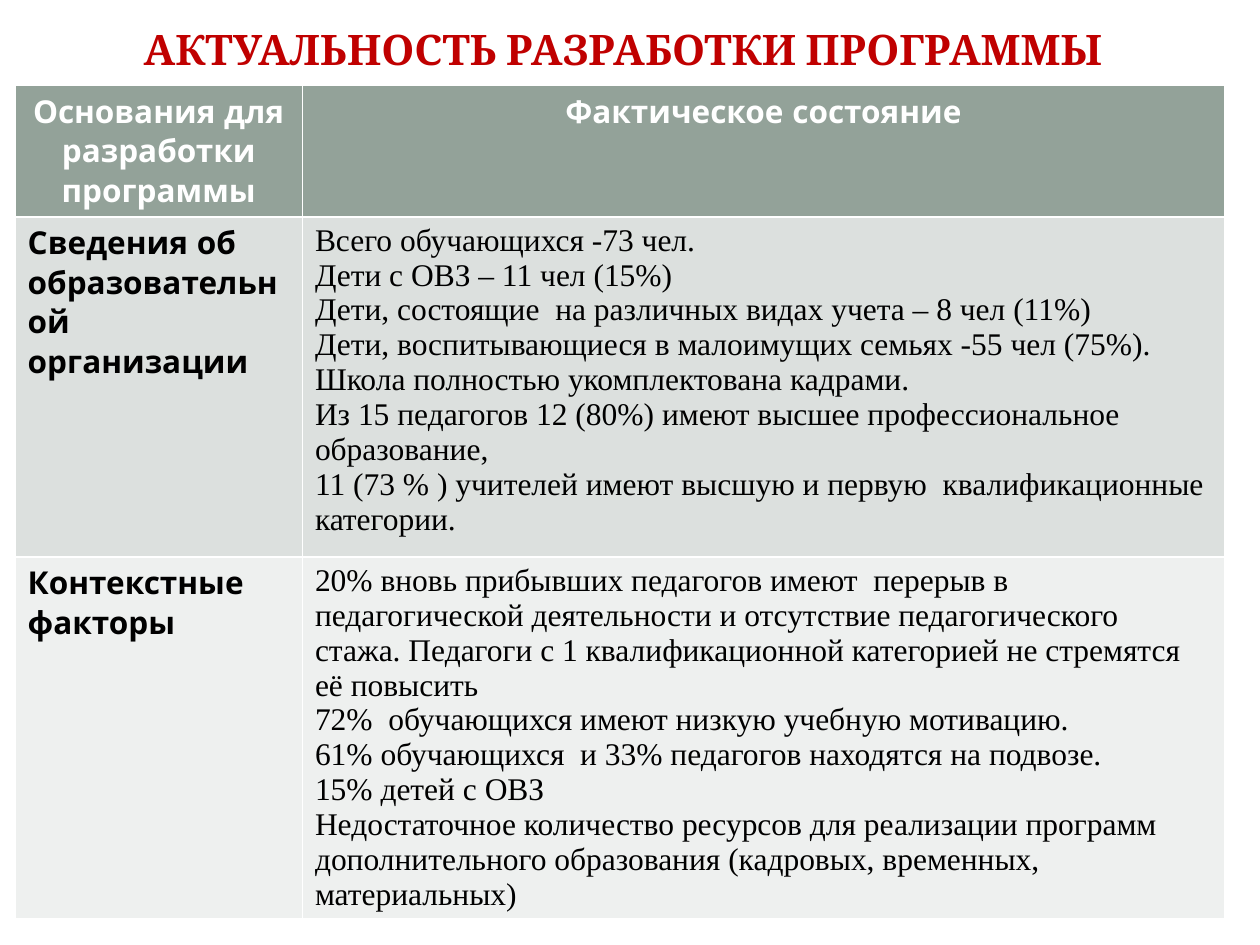
from dataclasses import dataclass

from pptx import Presentation
from pptx.dml.color import RGBColor
from pptx.enum.text import MSO_ANCHOR, PP_ALIGN
from pptx.util import Inches, Pt


@dataclass(frozen=True)
class Theme:
    """Colours, fonts and type sizes of the slide."""
    red: str = "C00000"
    white: str = "FFFFFF"
    black: str = "000000"
    fills: tuple = ("93A299", "DCE0DE", "EEF0EF")
    serif: str = "Cambria"
    label: str = "Quicksand"
    body: str = "Times New Roman"
    big: int = 24
    text: int = 18


THEME = Theme()
TITLE = "АКТУАЛЬНОСТЬ РАЗРАБОТКИ ПРОГРАММЫ"
HEADS = ("Основания для разработки программы", "Фактическое состояние")
ROWS = (
    ("Сведения об образовательной организации", (
        "Всего обучающихся -73 чел.",
        "Дети с ОВЗ – 11 чел (15%)",
        "Дети, состоящие  на различных видах учета – 8 чел (11%)",
        "Дети, воспитывающиеся в малоимущих семьях -55 чел (75%).",
        "Школа полностью укомплектована кадрами.",
        "Из 15 педагогов 12 (80%) имеют высшее профессиональное образование,",
        "11 (73 % ) учителей имеют высшую и первую  квалификационные категории.",
    )),
    ("Контекстные факторы", (
        "20% вновь прибывших педагогов имеют  перерыв в педагогической "
        "деятельности и отсутствие педагогического стажа. Педагоги с 1 "
        "квалификационной категорией не стремятся её повысить",
        "72%  обучающихся имеют низкую учебную мотивацию.",
        "61% обучающихся  и 33% педагогов находятся на подвозе.",
        "15% детей с ОВЗ",
        "Недостаточное количество ресурсов для реализации программ "
        "дополнительного образования (кадровых, временных, материальных)",
    )),
)


def write(frame, lines, face, size, color, bold, align=PP_ALIGN.LEFT):
    """Write each line as a paragraph with one styled run."""
    for i, line in enumerate(lines):
        para = frame.paragraphs[0] if i == 0 else frame.add_paragraph()
        para.alignment = align
        run = para.add_run()
        run.text = line
        font = run.font
        font.name, font.size, font.bold = face, Pt(size), bold
        font.color.rgb = RGBColor.from_string(color)


def add_title(slide, left, top, width, height):
    """Place the heading in the title placeholder."""
    title = slide.shapes.title
    title.left, title.top = Inches(left), Inches(top)
    title.width, title.height = Inches(width), Inches(height)
    frame = title.text_frame
    frame.vertical_anchor = MSO_ANCHOR.MIDDLE
    write(frame, [TITLE], THEME.serif, THEME.big, THEME.red, True,
          PP_ALIGN.CENTER)


def add_facts(slide, left, top, widths, heights):
    """Place the table of grounds and facts."""
    table = slide.shapes.add_table(
        len(heights), len(widths), Inches(left), Inches(top),
        Inches(sum(widths)), Inches(sum(heights))).table
    for col, width in zip(table.columns, widths):
        col.width = Inches(width)
    for row, height, fill in zip(table.rows, heights, THEME.fills):
        row.height = Inches(height)
        for cell in row.cells:
            cell.fill.solid()
            cell.fill.fore_color.rgb = RGBColor.from_string(fill)
    for i, head in enumerate(HEADS):
        write(table.cell(0, i).text_frame, [head], THEME.label, THEME.text,
              THEME.white, True, PP_ALIGN.CENTER)
    for i, (ground, facts) in enumerate(ROWS, 1):
        write(table.cell(i, 0).text_frame, [ground], THEME.label, THEME.text,
              THEME.black, True)
        write(table.cell(i, 1).text_frame, facts, THEME.body, THEME.text,
              THEME.black, False)


def main():
    """Build and save the slide."""
    deck = Presentation()
    deck.slide_width, deck.slide_height = Inches(10), Inches(7.5)
    slide = deck.slides.add_slide(deck.slide_layouts[5])
    add_title(slide, 0.43, 0, 9.03, 0.78)
    add_facts(slide, 0.12, 0.68, (2.28, 7.32), (1.03, 2.7, 2.87))
    deck.save("out.pptx")


if __name__ == "__main__":
    main()
